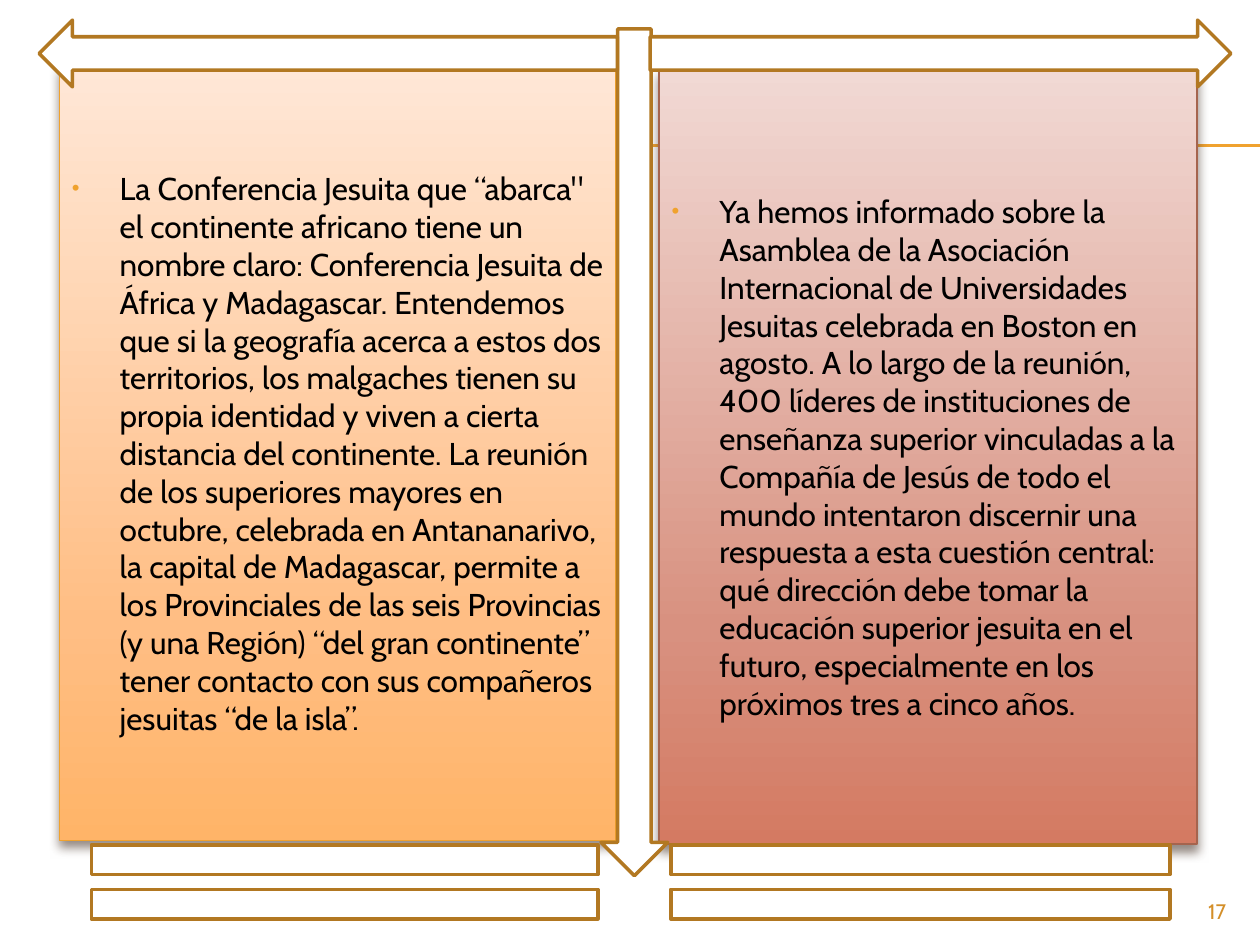
import copy
from dataclasses import dataclass

import lxml.etree
import pptx
import pptx.dml.color
import pptx.enum.shapes
import pptx.enum.text
import pptx.oxml
import pptx.oxml.ns
import pptx.util

Inches = pptx.util.Inches
Pt = pptx.util.Pt
SHAPES = pptx.enum.shapes.MSO_SHAPE
ALIGN = pptx.enum.text.PP_ALIGN
NAMESPACE = pptx.oxml.ns.nsdecls("a")


@dataclass(frozen=True)
class Theme:
    font: str = "Cabin"
    body_size: float = 18
    number_size: float = 12
    text: str = "000000"
    accent: str = "F0A22E"
    number: str = "D48F29"
    arrow_fill: str = "FFFFFF"
    arrow_line: str = "B27822"
    shadow: str = "4E3B30"
    orange: tuple = ((0, "FFE7D7"), (0.72, "FFBE84"), (1, "FFB468"))
    red: tuple = ((0, "F1D9D4"), (0.72, "D89180"), (1, "D47A62"))
    red_line: str = "A5644E"


def rgb(value):
    return pptx.dml.color.RGBColor.from_string(value)


def apply(target, values):
    for name, value in values.items():
        setattr(target, name, value)


def box(left, top, width, height):
    return dict(left=Inches(left), top=Inches(top),
                width=Inches(width), height=Inches(height))


class SlideBuilder:
    def __init__(self, slide, theme):
        self.slide = slide
        self.theme = theme

    def outline(self, line, color, width):
        line.color.rgb = rgb(color)
        line.width = Pt(width)

    def style(self, run, size, color):
        apply(run.font, dict(name=self.theme.font, size=Pt(size)))
        run.font.color.rgb = rgb(color)

    def rule(self, left, right, top):
        connector = self.slide.shapes.add_connector(
            pptx.enum.shapes.MSO_CONNECTOR.STRAIGHT,
            Inches(left), Inches(top), Inches(right), Inches(top))
        self.outline(connector.line, self.theme.accent, 0.75)
        lxml.etree.SubElement(connector._element.spPr,
                              pptx.oxml.ns.qn("a:effectLst"))

    def gradient(self, fill, stops):
        fill.gradient()
        fill.gradient_angle = 270
        stop_list = fill.gradient_stops[0]._gs.getparent()
        while len(stop_list) < len(stops):
            stop_list.append(copy.deepcopy(stop_list[-1]))
        for stop, (position, color) in zip(fill.gradient_stops, stops):
            stop.position = position
            stop.color.rgb = rgb(color)

    def drop_shadow(self, shape):
        shape.shadow.inherit = False
        effects = shape._element.spPr.find(pptx.oxml.ns.qn("a:effectLst"))
        effects.append(pptx.oxml.parse_xml(
            f'<a:outerShdw {NAMESPACE} blurRad="{Pt(6)}" dist="{Pt(4)}" '
            f'dir="5400000" rotWithShape="0"><a:srgbClr val="{self.theme.shadow}">'
            '<a:alpha val="60000"/></a:srgbClr></a:outerShdw>'))

    def bullet(self, paragraph):
        properties = paragraph._p.get_or_add_pPr()
        properties.set("marL", str(Inches(0.38)))
        properties.set("indent", str(-Inches(0.38)))
        for markup in (f'<a:buClr {NAMESPACE}><a:srgbClr val="{self.theme.accent}"/></a:buClr>',
                       f'<a:buSzPct {NAMESPACE} val="70000"/>',
                       f'<a:buChar {NAMESPACE} char="•"/>'):
            properties.append(pptx.oxml.parse_xml(markup))

    def panel(self, index, place, stops, line_color, text):
        shape = self.slide.placeholders[index]
        self.slide.shapes._spTree.append(shape._element)  # above the rules
        apply(shape, place)
        self.gradient(shape.fill, stops)
        self.outline(shape.line, line_color, 0.79)
        self.drop_shadow(shape)
        apply(shape.text_frame, dict(
            word_wrap=True, auto_size=pptx.enum.text.MSO_AUTO_SIZE.NONE,
            vertical_anchor=pptx.enum.text.MSO_ANCHOR.MIDDLE))
        paragraph = shape.text_frame.paragraphs[0]
        apply(paragraph, dict(alignment=ALIGN.LEFT, space_before=Pt(3.6)))
        self.bullet(paragraph)
        run = paragraph.add_run()
        run.text = text
        self.style(run, self.theme.body_size, self.theme.text)

    def symbol(self, kind, place):
        shape = self.slide.shapes.add_shape(kind, **place)
        shape.shadow.inherit = False
        shape.fill.solid()
        shape.fill.fore_color.rgb = rgb(self.theme.arrow_fill)
        self.outline(shape.line, self.theme.arrow_line, 2)

    def slide_number(self, place, number):
        frame = self.slide.shapes.add_textbox(**place).text_frame
        frame.word_wrap = True
        paragraph = frame.paragraphs[0]
        paragraph.alignment = ALIGN.RIGHT
        run = paragraph.add_run()
        run.text = number
        self.style(run, self.theme.number_size, self.theme.number)


AFRICA = (
    "La Conferencia Jesuita que “abarca\" el continente africano tiene un nombre claro: "
    "Conferencia Jesuita de África y Madagascar. Entendemos que si la geografía acerca a "
    "estos dos territorios, los malgaches tienen su propia identidad y viven a cierta "
    "distancia del continente. La reunión de los superiores mayores en octubre, celebrada "
    "en Antananarivo, la capital de Madagascar, permite a los Provinciales de las seis "
    "Provincias (y una Región) “del gran continente” tener contacto con sus compañeros "
    "jesuitas “de la isla”.")
UNIVERSITIES = (
    "Ya hemos informado sobre la Asamblea de la Asociación Internacional de Universidades "
    "Jesuitas celebrada en Boston en agosto. A lo largo de la reunión, 400 líderes de "
    "instituciones de enseñanza superior vinculadas a la Compañía de Jesús de todo el mundo "
    "intentaron discernir una respuesta a esta cuestión central: qué dirección debe tomar la "
    "educación superior jesuita en el futuro, especialmente en los próximos tres a cinco años.")


def main():
    theme = Theme()
    presentation = pptx.Presentation()
    apply(presentation, dict(slide_width=Inches(10), slide_height=Inches(7.5)))
    # Two-content layout, without its title
    slide = presentation.slides.add_slide(presentation.slide_layouts[3])
    title = slide.shapes.title._element
    title.getparent().remove(title)
    builder = SlideBuilder(slide, theme)

    # Double rule behind the panels
    for top in (1.15, 1.16):
        builder.rule(0.56, 10, top)

    # Text panels
    builder.panel(1, box(0.47, 0.52, 4.42, 6.15), theme.orange, theme.accent, AFRICA)
    builder.panel(2, box(5.23, 0.55, 4.27, 6.15), theme.red, theme.red_line, UNIVERSITIES)

    # Arrows and equal signs framing the panels
    for kind, place in (
            (SHAPES.DOWN_ARROW, box(4.77, 0.23, 0.53, 6.72)),
            (SHAPES.RIGHT_ARROW, box(5.16, 0.16, 4.61, 0.53)),
            (SHAPES.LEFT_ARROW, box(0.31, 0.16, 4.59, 0.53)),
            (SHAPES.MATH_EQUAL, box(0, 6.5, 5.47, 1)),
            (SHAPES.MATH_EQUAL, box(4.61, 6.5, 5.39, 1))):
        builder.symbol(kind, place)

    # Slide number
    builder.slide_number(box(9, 7.08, 0.83, 0.27), "17")
    presentation.save("out.pptx")


if __name__ == "__main__":
    main()
